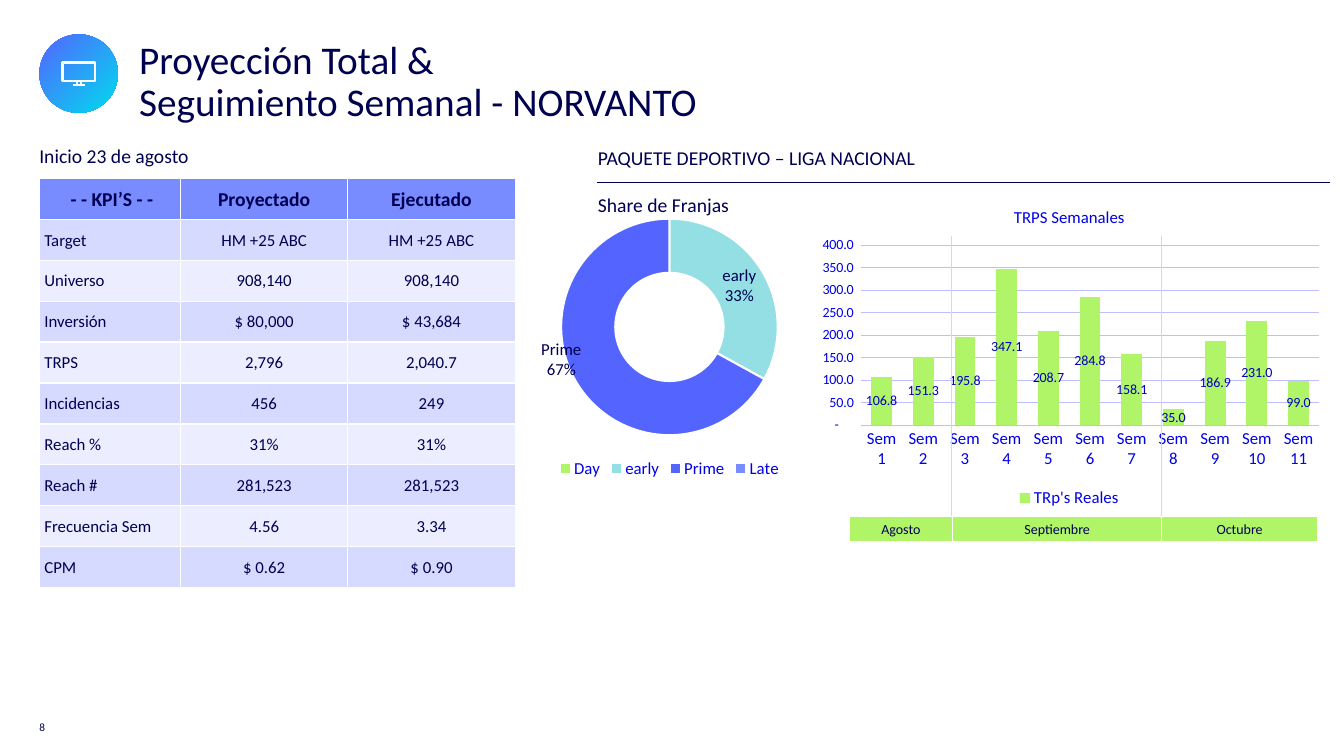
from dataclasses import dataclass

from pptx import Presentation
from pptx.chart.data import CategoryChartData
from pptx.dml.color import RGBColor
from pptx.enum.chart import XL_CHART_TYPE, XL_LABEL_POSITION, XL_LEGEND_POSITION, XL_TICK_MARK
from pptx.enum.shapes import MSO_CONNECTOR, MSO_SHAPE
from pptx.enum.text import MSO_ANCHOR, PP_ALIGN
from pptx.oxml import parse_xml
from pptx.oxml.ns import nsdecls, qn
from pptx.util import Inches, Pt


@dataclass(frozen=True)
class Theme:
    face: str = "Calibri"
    ink: str = "000050"
    axis: str = "0000E6"
    value: str = "0000BC"
    grid: str = "BEBEFF"
    rule: str = "D9D9D9"
    white: str = "FFFFFF"
    blue: str = "5465FF"
    cyan: str = "00DBEE"
    green: str = "B0F467"
    aqua: str = "93DFE3"
    head: str = "788BFF"
    bands: tuple = ("D6DAFF", "ECEEFF")
    title: int = 28
    lead: int = 14
    body: int = 12
    small: int = 10
    tiny: int = 8


T = Theme()
NUM = '_-* #,##0.0_-;\\-* #,##0.0_-;_-* "-"??_-;'
KPIS = [
    ("- - KPI’S - -", "Proyectado", "Ejecutado"),
    ("Target", "HM +25 ABC", "HM +25 ABC"),
    ("Universo", "908,140", "908,140"),
    ("Inversión", "$ 80,000", "$ 43,684"),
    ("TRPS", "2,796", "2,040.7"),
    ("Incidencias", "456", "249"),
    ("Reach %", "31%", "31%"),
    ("Reach #", "281,523", "281,523"),
    ("Frecuencia Sem", "4.56", "3.34"),
    ("CPM", "$ 0.62", "$ 0.90"),
]
TRPS = (106.8, 151.3, 195.8, 347.1, 208.7, 284.8, 158.1, 35, 186.9, 231, 99)
SHARES = {"Day": (None, T.green), "early": (33, T.aqua),
          "Prime": (67, T.blue), "Late": (None, T.head)}


def rgb(code):
    return RGBColor.from_string(code)


def style(font, size, color=T.ink, bold=False):
    font.name, font.size, font.bold = T.face, Pt(size), bold
    font.color.rgb = rgb(color)


def paint(fill, color):
    fill.solid()
    fill.fore_color.rgb = rgb(color)


def trim(frame, side=0, top=0, base=0):
    frame.margin_left = frame.margin_right = Inches(side)
    frame.margin_top, frame.margin_bottom = Inches(top), Inches(base)


def add_title(slide, text):
    title = slide.shapes.title
    title.left, title.top = Inches(1.38), Inches(0.4)
    title.width, title.height = Inches(6.6), Inches(1.08)
    frame = title.text_frame
    frame.text = text
    frame.vertical_anchor = MSO_ANCHOR.TOP
    trim(frame)
    para = frame.paragraphs[0]
    para.alignment, para.line_spacing = PP_ALIGN.LEFT, 0.9
    style(para.font, T.title)


def add_text(slide, text, x, y, w, h, size=T.lead, wrap=True, anchor=MSO_ANCHOR.TOP):
    box = slide.shapes.add_textbox(Inches(x), Inches(y), Inches(w), Inches(h))
    frame = box.text_frame
    frame.text, frame.word_wrap, frame.vertical_anchor = text, wrap, anchor
    trim(frame)
    para = frame.paragraphs[0]
    para.line_spacing = 1.1
    style(para.font, size)


def add_line(slide, x1, y1, x2, y2, color, width=0.5):
    line = slide.shapes.add_connector(
        MSO_CONNECTOR.STRAIGHT, Inches(x1), Inches(y1), Inches(x2), Inches(y2))
    line.line.color.rgb, line.line.width = rgb(color), Pt(width)
    line._element.spPr.append(parse_xml(f"<a:effectLst {nsdecls('a')}/>"))


def add_shape(slide, kind, x, y, w, h):
    shape = slide.shapes.add_shape(kind, Inches(x), Inches(y), Inches(w), Inches(h))
    shape.shadow.inherit = False
    return shape


def add_icon(slide):
    disc = add_shape(slide, MSO_SHAPE.OVAL, 0.39, 0.34, 0.78, 0.78)
    disc.line.fill.background()
    disc.fill.gradient()
    disc.fill.gradient_angle = 315
    for stop, color, spot in zip(disc.fill.gradient_stops, (T.blue, T.cyan), (0, 1)):
        stop.color.rgb, stop.position = rgb(color), spot
    screen = add_shape(slide, MSO_SHAPE.RECTANGLE, 0.62, 0.62, 0.32, 0.18)
    screen.fill.background()
    screen.line.color.rgb, screen.line.width = rgb(T.white), Pt(1.5)
    for ends in ((0.76, 0.8, 0.76, 0.84), (0.8, 0.8, 0.8, 0.84), (0.72, 0.84, 0.84, 0.84)):
        add_line(slide, *ends, T.white, 1.5)


def edge(cell, base):
    """Draw white cell borders, with the bottom one base points wide."""
    props = cell._tc.get_or_add_tcPr()
    for spot, (side, width) in enumerate(zip("LRTB", (1, 1, 1, base))):
        props.insert(spot, parse_xml(
            f'<a:ln{side} {nsdecls("a")} w="{Pt(width)}"><a:solidFill>'
            f'<a:srgbClr val="{T.white}"/></a:solidFill></a:ln{side}>'))


def add_grid(slide, x, y, widths, height, count):
    frame = slide.shapes.add_table(
        count, len(widths), Inches(x), Inches(y),
        Inches(sum(widths)), Inches(height * count))
    table = frame.table
    for col, width in zip(table.columns, widths):
        col.width = Inches(width)
    for row in table.rows:
        row.height = Inches(height)
    return table


def fill_cell(cell, text, color, size, base=1, bold=False, align=PP_ALIGN.CENTER):
    cell.text = text
    paint(cell.fill, color)
    edge(cell, base)
    para = cell.text_frame.paragraphs[0]
    para.alignment = align
    style(para.font, size, bold=bold)


def add_kpis(slide):
    table = add_grid(slide, 0.39, 1.77, (1.4, 1.66, 1.66), 4.06 / len(KPIS), len(KPIS))
    for r, row in enumerate(KPIS):
        for c, text in enumerate(row):
            cell = table.cell(r, c)
            trim(cell, 0.01, 0.01)
            cell.vertical_anchor = MSO_ANCHOR.MIDDLE
            if r == 0:
                fill_cell(cell, text, T.head, T.lead, bold=True)
            else:
                align = PP_ALIGN.CENTER if c else PP_ALIGN.LEFT
                fill_cell(cell, text, T.bands[(r - 1) % 2], T.body, align=align)
            if c == 0:
                cell.margin_left = Inches(0.05)


def add_months(slide):
    table = add_grid(slide, 8.42, 5.12, (1.03, 2.07, 1.55), 0.26, 1)
    for cell, month in zip(table.rows[0].cells, ("Agosto", "Septiembre", "Octubre")):
        fill_cell(cell, month, T.green, T.small, 3)


def add_chart(slide, kind, name, names, values, box, plot):
    """Add a chart whose plot area takes the given shares of its box."""
    data = CategoryChartData()
    data.categories = names
    data.add_series(name, values)
    chart = slide.shapes.add_chart(kind, *map(Inches, box), data).chart
    style(chart.font, T.small)
    chart.has_title = False
    chart.has_legend = True
    chart.legend.position = XL_LEGEND_POSITION.BOTTOM
    chart.legend.include_in_layout = False
    style(chart.legend.font, T.body, T.axis)
    area = chart._chartSpace.chart.plotArea
    for old in area.findall(qn("c:layout")):
        area.remove(old)
    spots = "".join(f'<c:{k} val="{v}"/>' for k, v in zip("xywh", plot))
    area.insert(0, parse_xml(
        f'<c:layout {nsdecls("c")}><c:manualLayout><c:layoutTarget val="inner"/>'
        f'<c:xMode val="edge"/><c:yMode val="edge"/>{spots}</c:manualLayout></c:layout>'))
    return chart


def add_weeks(slide):
    weeks = [f"Sem {n}" for n in range(1, len(TRPS) + 1)]
    chart = add_chart(slide, XL_CHART_TYPE.COLUMN_CLUSTERED, "TRp's Reales", weeks, TRPS,
                      (8.02, 1.89, 5.17, 3.19), (0.1, 0.17, 0.88, 0.56))
    chart.has_title = True
    chart.chart_title.text_frame.text = "TRPS Semanales"
    style(chart.chart_title.text_frame.paragraphs[0].font, T.body, T.axis)
    plot = chart.plots[0]
    plot.gap_width, plot.overlap, plot.vary_by_categories = 100, -27, False
    bars = plot.series[0]
    paint(bars.format.fill, T.green)
    tags = bars.data_labels
    tags.show_value, tags.position = True, XL_LABEL_POSITION.CENTER
    tags.number_format, tags.number_format_is_linked = NUM, False
    style(tags.font, T.small, T.value)
    for axis, size in ((chart.category_axis, T.body), (chart.value_axis, T.small)):
        axis.major_tick_mark = axis.minor_tick_mark = XL_TICK_MARK.NONE
        style(axis.tick_labels.font, size, T.axis)
    scale = chart.value_axis
    scale.minimum_scale, scale.maximum_scale, scale.major_unit = 0, 400, 50
    scale.tick_labels.number_format = NUM
    scale.tick_labels.number_format_is_linked = False
    scale.format.line.fill.background()
    for line in (chart.category_axis.format.line, scale.major_gridlines.format.line):
        line.color.rgb, line.width = rgb(T.grid), Pt(0.75)


def add_share(slide):
    values, colors = zip(*SHARES.values())
    chart = add_chart(slide, XL_CHART_TYPE.DOUGHNUT, "Series 1", list(SHARES), values,
                      (5.06, 2.03, 3.16, 2.76), (0.16, 0.05, 0.68, 0.78))
    plot = chart.plots[0]
    plot._element.find(qn("c:holeSize")).set("val", "53")
    ring = plot.series[0]
    for n, color in enumerate(colors):
        look = ring.points[n].format
        paint(look.fill, color)
        look.line.color.rgb, look.line.width = rgb(T.white), Pt(1.5)
    tags = ring.data_labels
    tags.number_format, tags.number_format_is_linked = "0%", False
    style(tags.font, T.body)
    style(ring.points[2].data_label.font, T.body)
    prime = tags._element.find(qn("c:dLbl"))
    prime.insert(1, parse_xml(
        f'<c:layout {nsdecls("c")}><c:manualLayout><c:x val="-0.12"/>'
        f'<c:y val="-0.03"/></c:manualLayout></c:layout>'))
    for group in (tags._element, prime):
        for flag, on in (("Val", 0), ("CatName", 1), ("Percent", 1)):
            group.find(qn(f"c:show{flag}")).set("val", str(on))
        last = group.find(qn("c:showBubbleSize"))
        if last is None:
            last = group.find(qn("c:showPercent"))
        last.addnext(parse_xml(f"<c:separator {nsdecls('c')}>\n</c:separator>"))


def main():
    deck = Presentation()
    deck.slide_width, deck.slide_height = Inches(13.33), Inches(7.5)
    slide = deck.slides.add_slide(deck.slide_layouts[5])
    add_title(slide, "Proyección Total &\vSeguimiento Semanal - NORVANTO")
    add_icon(slide)
    add_text(slide, "Inicio 23 de agosto", 0.39, 1.4, 4.97, 0.25)
    add_kpis(slide)
    add_text(slide, "PAQUETE DEPORTIVO – LIGA NACIONAL", 5.93, 1.42, 3.17, 0.25, wrap=False)
    add_line(slide, 13.19, 1.81, 5.92, 1.81, T.ink)
    add_text(slide, "Share de Franjas", 5.93, 1.89, 1.48, 0.24, wrap=False)
    add_share(slide)
    add_weeks(slide)
    add_months(slide)
    for x in (9.44, 11.52):
        add_line(slide, x, 2.34, x, 5.12, T.rule)
    add_text(slide, "8", 0.39, 7.01, 0.57, 0.4, T.tiny, anchor=MSO_ANCHOR.MIDDLE)
    deck.save("out.pptx")


if __name__ == "__main__":
    main()
